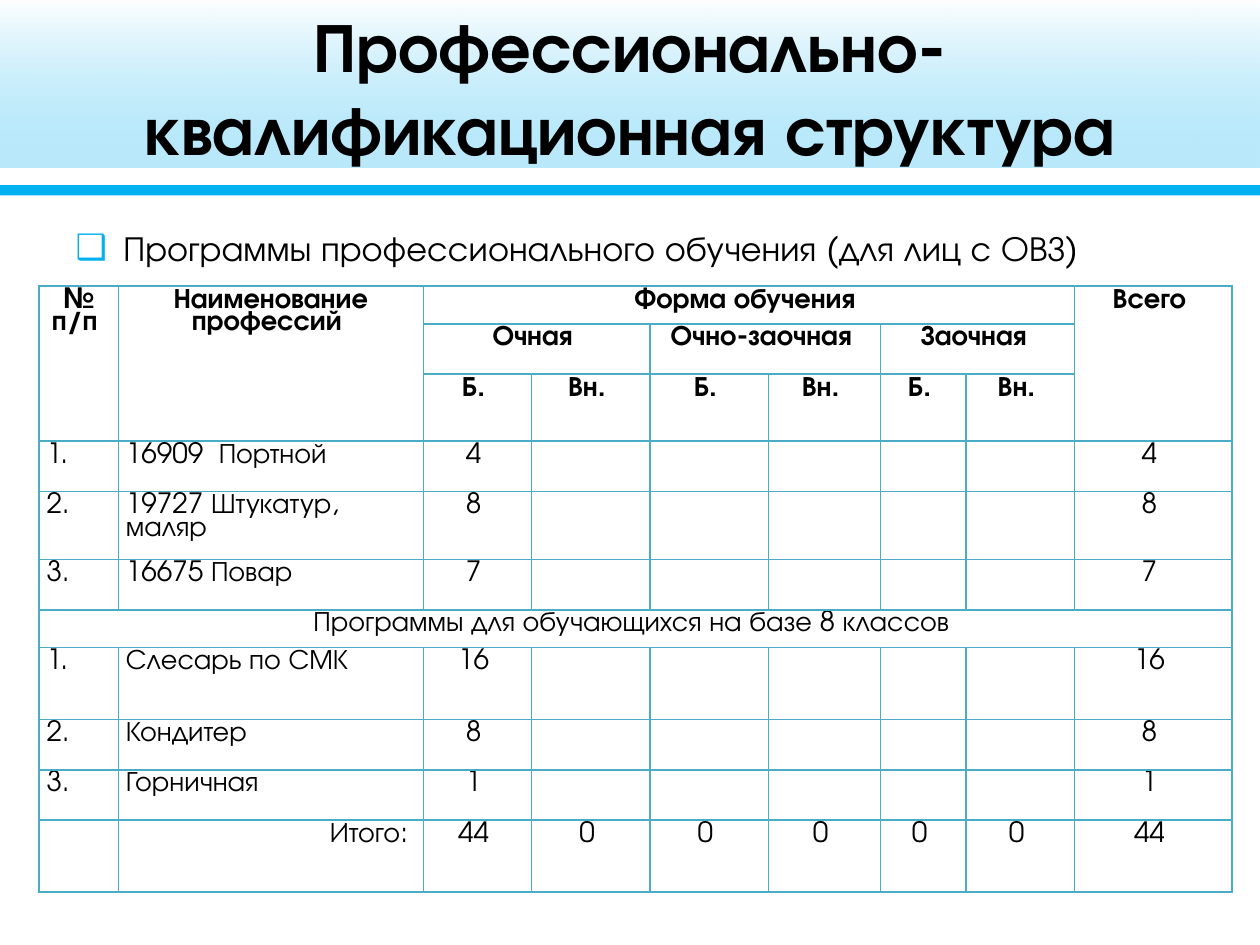
"""Build the slide on the professional qualification structure with its table of programmes."""
import pptx
import pptx.dml.color
import pptx.enum.shapes
import pptx.enum.text
import pptx.oxml
import pptx.oxml.ns
import pptx.util
from lxml import etree

Inches = pptx.util.Inches
Pt = pptx.util.Pt
RGBColor = pptx.dml.color.RGBColor
ALIGN = pptx.enum.text.PP_ALIGN
ANCHOR = pptx.enum.text.MSO_ANCHOR

BLACK = RGBColor(0x00, 0x00, 0x00)
WHITE = RGBColor(0xFF, 0xFF, 0xFF)
BLUE = RGBColor(0x00, 0xB0, 0xF0)
BORDER = RGBColor(0x4B, 0xAC, 0xC6)
FONT = "TeX Gyre Adventor"

TITLE = "Профессионально-квалификационная структура"
SUBTITLE = "Программы профессионального обучения (для лиц с ОВЗ)"
SECTION = "Программы для обучающихся на базе 8 классов "
BLANKS = [""] * 5
HEADER_ROWS = 3
ROWS = [
    ["№ п/п ", "Наименование профессий ", "Форма обучения ", *BLANKS, "Всего "],
    ["", "", "Очная ", "", "Очно-заочная ", "", "Заочная ", "", ""],
    ["", "", *["Б. ", "Вн. "] * 3, ""],
    ["1.", "16909  Портной", "4 ", *BLANKS, "4 "],
    ["2.", "19727 Штукатур, маляр", "8 ", *BLANKS, "8 "],
    ["3.", "16675 Повар", "7 ", *BLANKS, "7 "],
    [SECTION, *[""] * 8],
    ["1.", "Слесарь по СМК", "16 ", *BLANKS, "16 "],
    ["2.", "Кондитер", "8 ", *BLANKS, "8 "],
    ["3.", "Горничная", "1 ", *BLANKS, "1 "],
    ["", "Итого: ", "44 ", *["0 "] * 5, "44 "],
]
MERGES = [
    ((0, 0), (2, 0)), ((0, 1), (2, 1)), ((0, 8), (2, 8)), ((0, 2), (0, 7)),
    ((1, 2), (1, 3)), ((1, 4), (1, 5)), ((1, 6), (1, 7)), ((6, 0), (6, 8)),
]
COLUMN_WIDTHS = [0.63, 2.42, 0.86, 0.94, 0.94, 0.89, 0.68, 0.86, 1.25]
ROW_HEIGHTS = [0.3, 0.4, 0.53, 0.4, 0.54, 0.4, 0.3, 0.57, 0.4, 0.4, 0.57]


def add_element(parent, tag, **attributes):
    """Append a DrawingML element to its parent."""
    return etree.SubElement(parent, pptx.oxml.ns.qn(tag), **attributes)


def write(frame, text, size, bold=False, align=ALIGN.LEFT, spacing=None):
    """Put one formatted paragraph into a text frame."""
    frame.word_wrap = True
    paragraph = frame.paragraphs[0]
    paragraph.alignment = align
    paragraph.space_before = Pt(0)
    if spacing:
        paragraph.line_spacing = spacing
    if text:
        span = paragraph.add_run()
        span.text = text
        span.font.name = FONT
        span.font.size = Pt(size)
        span.font.bold = bold
        span.font.color.rgb = BLACK
    else:
        add_element(paragraph._p, "a:endParaRPr", sz=str(size * 100))
    return paragraph


def place(shape, left, top, width, height):
    """Move and size a shape in inches."""
    shape.left, shape.top = Inches(left), Inches(top)
    shape.width, shape.height = Inches(width), Inches(height)


def add_band(page, left, top, width, height):
    """Add a plain rectangle without outline."""
    band = page.shapes.add_shape(
        pptx.enum.shapes.MSO_SHAPE.RECTANGLE,
        Inches(left), Inches(top), Inches(width), Inches(height))
    band.shadow.inherit = False
    band.line.fill.background()
    return band


def fade(band, stops):
    """Fill a band downwards with (position, colour, opacity percent) stops."""
    band.fill.gradient()
    band.fill.gradient_angle = 270
    for stop, (position, colour, opacity) in zip(band.fill.gradient_stops, stops):
        stop.position = position
        stop.color.rgb = colour
    for colour_node, (_, _, opacity) in zip(
            band._element.spPr.iter(pptx.oxml.ns.qn("a:srgbClr")), stops):
        add_element(colour_node, "a:alpha", val=str(opacity * 1000))


def add_header(page):
    """Draw the header bands and send them behind the placeholders."""
    veil = add_band(page, -0.02, -0.01, 10, 1.33)
    fade(veil, [(0, WHITE, 80), (1, WHITE, 23)])
    rule = add_band(page, 0, 1.47, 10.12, 0.08)
    rule.fill.solid()
    rule.fill.fore_color.rgb = BLUE
    glow = add_band(page, 0, 0, 10.12, 1.33)
    fade(glow, [(0, WHITE, 46), (0.84, BLUE, 27)])
    for index, band in enumerate([veil, rule, glow], start=2):
        page.shapes._spTree.insert(index, band._element)


def add_texts(page):
    """Fill the title and body placeholders."""
    title, body = page.shapes.title, page.placeholders[1]
    place(title, 0.5, 0.06, 9, 1.25)
    place(body, 0.5, 1.75, 9, 4.95)
    for box in (title, body):
        box.text_frame.auto_size = pptx.enum.text.MSO_AUTO_SIZE.NONE
    title.text_frame.vertical_anchor = ANCHOR.MIDDLE
    write(title.text_frame, TITLE, 39.6, bold=True, align=ALIGN.CENTER)
    paragraph = write(body.text_frame, SUBTITLE, 20)
    properties = paragraph._p.get_or_add_pPr()
    properties.set("marL", str(Inches(0.38)))
    properties.set("indent", str(-Inches(0.38)))
    add_element(add_element(properties, "a:buClr"), "a:srgbClr", val=str(BLUE))
    add_element(properties, "a:buChar", char="❑")


def format_cell(cell, text, bold, align):
    """Write one table cell with its margins and borders."""
    cell.margin_left = cell.margin_right = Inches(0.06)
    cell.margin_top = cell.margin_bottom = Inches(0.03)
    cell.vertical_anchor = ANCHOR.TOP
    write(cell.text_frame, text, 16, bold=bold, align=align, spacing=0.88)
    properties = cell._tc.get_or_add_tcPr()
    for side in ("a:lnL", "a:lnR", "a:lnT", "a:lnB"):
        line = add_element(properties, side, w=str(Pt(1)))
        add_element(add_element(line, "a:solidFill"), "a:srgbClr", val=str(BORDER))
    cell.fill.background()


def cell_alignment(row, column, text):
    """Choose the alignment of a table cell by its role."""
    if text.startswith("Итого"):
        return ALIGN.RIGHT
    if row < HEADER_ROWS or column > 1 or text == SECTION:
        return ALIGN.CENTER
    return ALIGN.LEFT


def add_programmes(page):
    """Build the table of programmes."""
    table = page.shapes.add_table(
        len(ROWS), len(COLUMN_WIDTHS), Inches(0.31), Inches(2.27),
        Inches(sum(COLUMN_WIDTHS)), Inches(sum(ROW_HEIGHTS))).table
    table.first_row = table.horz_banding = False
    for column, width in zip(table.columns, COLUMN_WIDTHS):
        column.width = Inches(width)
    for row, height in zip(table.rows, ROW_HEIGHTS):
        row.height = Inches(height)
    for row, texts in enumerate(ROWS):
        for column, text in enumerate(texts):
            format_cell(table.cell(row, column), text, row < HEADER_ROWS,
                        cell_alignment(row, column, text))
    for first, last in MERGES:
        table.cell(*first).merge(table.cell(*last))


def main():
    """Create and save the deck."""
    deck = pptx.Presentation()
    deck.slide_width, deck.slide_height = Inches(10), Inches(7.5)
    page = deck.slides.add_slide(deck.slide_layouts[1])
    add_header(page)
    add_texts(page)
    add_programmes(page)
    deck.save("out.pptx")


if __name__ == "__main__":
    main()
